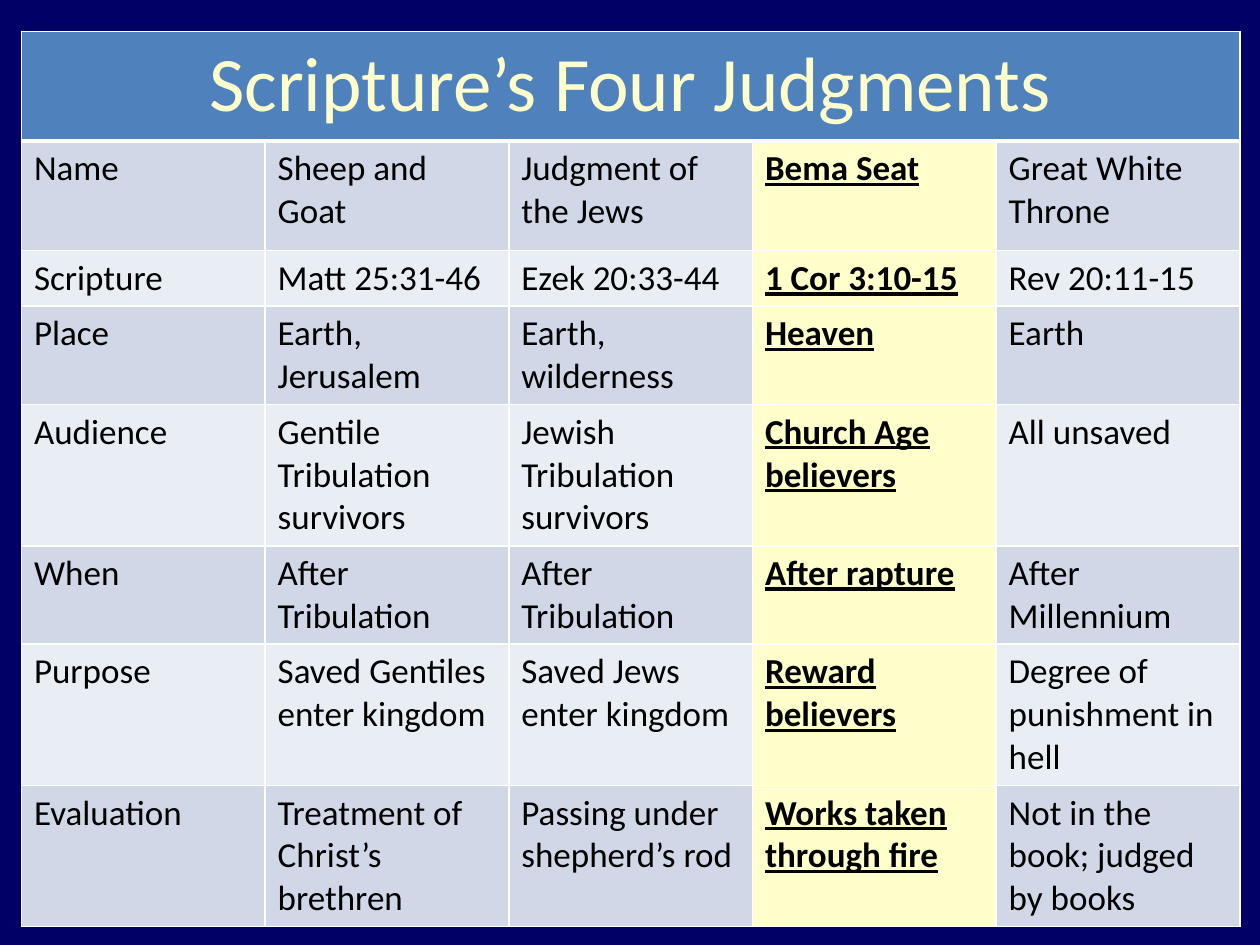
from lxml import etree
from pptx import Presentation
from pptx.dml.color import RGBColor
from pptx.enum.text import PP_ALIGN
from pptx.oxml.ns import qn
from pptx.util import Inches, Pt

LEFT, CENTER = PP_ALIGN.LEFT, PP_ALIGN.CENTER
NAVY, BLUE, CREAM = "000066", "4F81BD", "FFFFCC"
BLACK, WHITE = "000000", "FFFFFF"
BANDS = ["D0D8E8", "E9EDF4"]
FOCUS = 3

TITLE = "Scripture’s Four Judgments"
ROWS = [
    ("Name", "Sheep and Goat", "Judgment of the Jews", "Bema Seat", "Great White Throne"),
    ("Scripture", "Matt 25:31-46", "Ezek 20:33-44", "1 Cor 3:10-15", "Rev 20:11-15"),
    ("Place", "Earth, Jerusalem", "Earth, wilderness", "Heaven", "Earth"),
    ("Audience", "Gentile Tribulation survivors", "Jewish Tribulation survivors",
     "Church Age believers", "All unsaved"),
    ("When", "After Tribulation", "After Tribulation", "After rapture", "After Millennium"),
    ("Purpose", "Saved Gentiles enter kingdom", "Saved Jews enter kingdom",
     "Reward believers", "Degree of punishment in hell"),
    ("Evaluation", "Treatment of Christ’s brethren", "Passing under shepherd’s rod",
     "Works taken through fire", "Not in the book; judged by books"),
]
HEIGHTS = [0.87, 0.87, 0.43, 0.77, 1.1, 0.77, 1.1, 1.1]
X, Y, WIDTH = 0.17, 0.25, 9.67


def color(code):
    return RGBColor.from_string(code)


def border(cell, **widths):
    props = cell._tc.get_or_add_tcPr()
    for side in "LRTB":
        line = etree.SubElement(props, qn(f"a:ln{side}"), w=str(Pt(widths.get(side, 1))))
        fill = etree.SubElement(line, qn("a:solidFill"))
        etree.SubElement(fill, qn("a:srgbClr"), val=WHITE)


def paint(cell, code):
    cell.fill.solid()
    cell.fill.fore_color.rgb = color(code)


def write(cell, text, size=20, ink=BLACK, align=LEFT, strong=False):
    par = cell.text_frame.paragraphs[0]
    par.alignment = align
    run = par.add_run()
    run.text = text
    font = run.font
    font.name, font.size = "Calibri", Pt(size)
    font.bold = font.underline = strong
    font.color.rgb = color(ink)


def main():
    deck = Presentation()
    deck.slide_width, deck.slide_height = Inches(10), Inches(7.5)
    slide = deck.slides.add_slide(deck.slide_layouts[6])
    back = slide.background.fill
    back.solid()
    back.fore_color.rgb = color(NAVY)

    count = len(ROWS[0])
    table = slide.shapes.add_table(
        len(HEIGHTS), count, Inches(X), Inches(Y), Inches(WIDTH), Inches(sum(HEIGHTS))
    ).table
    for col in table.columns:
        col.width = Inches(WIDTH / count)
    for row, height in zip(table.rows, HEIGHTS):
        row.height = Inches(height)

    head = table.cell(0, 0)
    head.merge(table.cell(0, count - 1))
    for col in range(count):
        cell = table.cell(0, col)
        border(cell, B=3)
        paint(cell, BLUE)
    write(head, TITLE, size=44, ink=CREAM, align=CENTER)

    for r, texts in enumerate(ROWS):
        for c, text in enumerate(texts):
            cell = table.cell(r + 1, c)
            border(cell, T=1 if r else 3)
            paint(cell, CREAM if c == FOCUS else BANDS[r % 2])
            write(cell, text, strong=c == FOCUS)

    deck.save("out.pptx")


if __name__ == "__main__":
    main()
